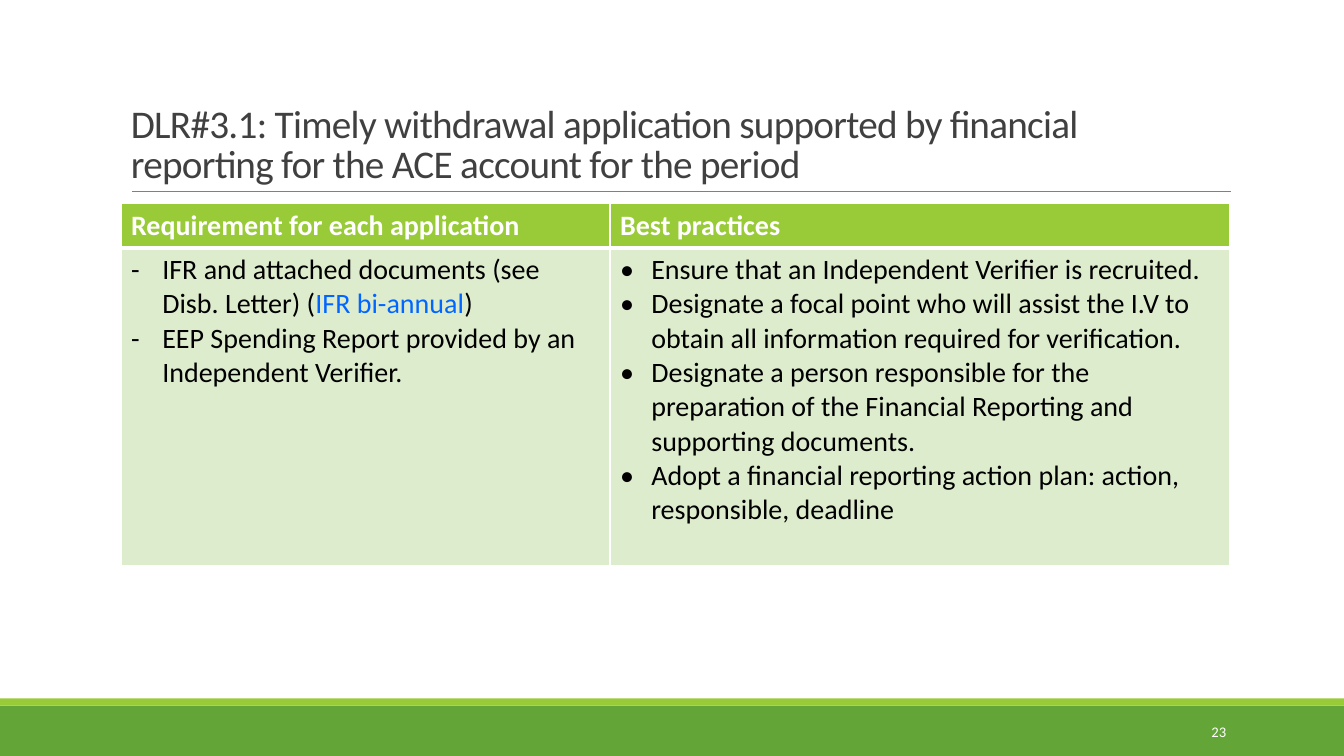
from lxml import etree
from pptx import Presentation
from pptx.dml.color import RGBColor
from pptx.enum.shapes import MSO_CONNECTOR, MSO_SHAPE
from pptx.enum.text import MSO_ANCHOR, PP_ALIGN
from pptx.oxml.ns import qn
from pptx.util import Inches, Pt

RECTANGLE, STRAIGHT = MSO_SHAPE.RECTANGLE, MSO_CONNECTOR.STRAIGHT
BOTTOM, MIDDLE = MSO_ANCHOR.BOTTOM, MSO_ANCHOR.MIDDLE
LEFT, RIGHT = PP_ALIGN.LEFT, PP_ALIGN.RIGHT

TITLE = ("DLR#3.1: Timely withdrawal application supported by financial "
         "reporting for the ACE account for the period")
PAGE_NUMBER = "23"
# Each item is a list of (text, colour name) runs.
COLUMNS = [
    {"heading": "Requirement for each application", "width": 4.85, "bullet": "-",
     "items": [
         [("IFR and attached documents (see Disb. Letter) (", "black"),
          ("IFR bi-annual", "blue"), (")", "black")],
         [("EEP Spending Report provided by an Independent Verifier.", "black")]]},
    {"heading": "Best practices", "width": 6.15, "bullet": "•",
     "items": [
         [("Ensure that an Independent Verifier is recruited.", "black")],
         [("Designate a focal point who will assist the I.V to obtain all "
           "information required for verification.", "black")],
         [("Designate a person responsible for the preparation of the "
           "Financial Reporting and supporting documents.", "black")],
         [("Adopt a financial reporting action plan: action, responsible, "
           "deadline", "black")]]},
]
COLORS = {"green": "63A537", "lime": "99CB38", "pale": "DEECCE", "rule": "808080",
          "title": "404040", "white": "FFFFFF", "black": "000000", "blue": "0066FF"}
FONT = "Calibri"
SLIDE_WIDTH, SLIDE_HEIGHT = 13.33, 7.5
BANDS = [("green", 7, 0.5), ("lime", 6.93, 0.07)]
TABLE_LEFT, TABLE_TOP, TABLE_WIDTH = 1.2, 2.02, 11
ROW_HEIGHTS = [0.44, 3.15]
INDENT = 0.31


def color(name):
    return RGBColor.from_string(COLORS[name])


def add_run(paragraph, text, size, color_name, bold=False):
    run = paragraph.add_run()
    run.text = text
    for attribute, value in {"name": FONT, "size": Pt(size), "bold": bold}.items():
        setattr(run.font, attribute, value)
    run.font.color.rgb = color(color_name)
    return run


def add_text(slide, box, text, size, color_name, anchor, align):
    frame = slide.shapes.add_textbox(*map(Inches, box)).text_frame
    frame.word_wrap = True
    frame.vertical_anchor = anchor
    paragraph = frame.paragraphs[0]
    paragraph.alignment = align
    return paragraph, add_run(paragraph, text, size, color_name)


def set_bullet(paragraph, character):
    properties = paragraph._p.get_or_add_pPr()
    properties.set("marL", str(Inches(INDENT)))
    properties.set("indent", str(-Inches(INDENT)))
    etree.SubElement(properties, qn("a:buFont"), typeface=FONT)
    etree.SubElement(properties, qn("a:buChar"), char=character)


def style_cell(cell, fill_name, borders):
    """Fill the cell and draw white borders, given as {side: points}."""
    cell.fill.solid()
    cell.fill.fore_color.rgb = color(fill_name)
    properties = cell._tc.get_or_add_tcPr()
    for position, side in enumerate("LRTB"):
        border = etree.Element(qn(f"a:ln{side}"), w=str(Pt(borders[side])))
        fill = etree.SubElement(border, qn("a:solidFill"))
        etree.SubElement(fill, qn("a:srgbClr"), val=COLORS["white"])
        properties.insert(position, border)


def add_bands(slide):
    for name, top, height in BANDS:
        band = slide.shapes.add_shape(
            RECTANGLE, 0, Inches(top), Inches(SLIDE_WIDTH), Inches(height))
        band.shadow.inherit = False
        band.fill.solid()
        band.fill.fore_color.rgb = color(name)
        band.line.fill.background()


def add_title(slide):
    rule = slide.shapes.add_connector(
        STRAIGHT, Inches(1.31), Inches(1.9), Inches(12.21), Inches(1.9))
    rule.line.color.rgb = color("rule")
    rule.line.width = Pt(0.5)
    etree.SubElement(rule._element.spPr, qn("a:effectLst"))
    paragraph, run = add_text(
        slide, (1.2, 0.31, 11, 1.59), TITLE, 28, "title", BOTTOM, LEFT)
    paragraph.line_spacing = 0.85
    run.font._element.set("spc", "-50")


def add_practices_table(slide):
    table = slide.shapes.add_table(
        len(ROW_HEIGHTS), len(COLUMNS), Inches(TABLE_LEFT), Inches(TABLE_TOP),
        Inches(TABLE_WIDTH), Inches(sum(ROW_HEIGHTS))).table
    for row, height in zip(table.rows, ROW_HEIGHTS):
        row.height = Inches(height)
    for index, column in enumerate(COLUMNS):
        table.columns[index].width = Inches(column["width"])
        header, body = table.cell(0, index), table.cell(1, index)
        add_run(header.text_frame.paragraphs[0], column["heading"], 20, "white", True)
        style_cell(header, "lime", {"L": 1, "R": 1, "T": 1, "B": 3})
        for number, item in enumerate(column["items"]):
            frame = body.text_frame
            paragraph = frame.add_paragraph() if number else frame.paragraphs[0]
            set_bullet(paragraph, column["bullet"])
            for text, color_name in item:
                add_run(paragraph, text, 20, color_name)
        style_cell(body, "pale", {"L": 1, "R": 1, "T": 3, "B": 1})


def main():
    presentation = Presentation()
    presentation.slide_width = Inches(SLIDE_WIDTH)
    presentation.slide_height = Inches(SLIDE_HEIGHT)
    slide = presentation.slides.add_slide(presentation.slide_layouts[6])
    add_bands(slide)
    add_title(slide)
    add_practices_table(slide)
    add_text(slide, (10.83, 7.06, 1.43, 0.4), PAGE_NUMBER, 10.5, "white", MIDDLE, RIGHT)
    presentation.save("out.pptx")


if __name__ == "__main__":
    main()
